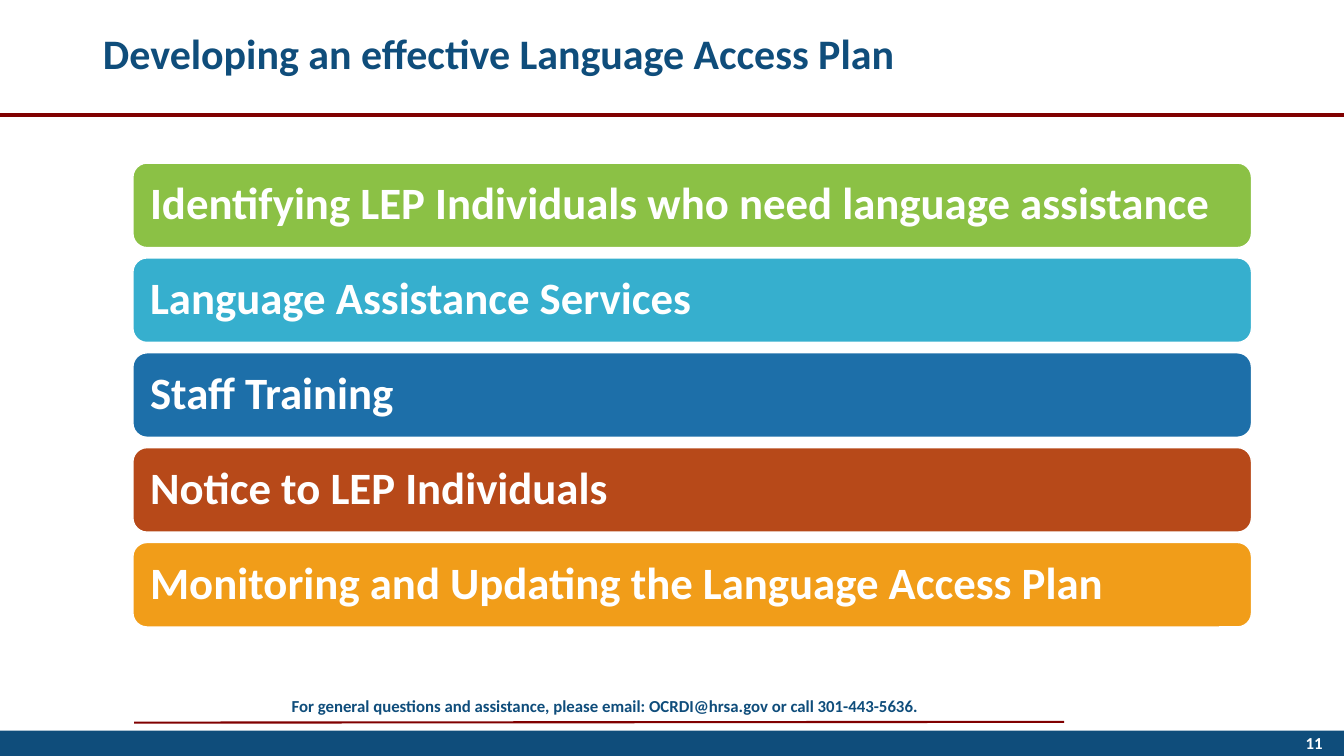
from pptx import Presentation
from pptx.dml.color import RGBColor
from pptx.enum.shapes import MSO_CONNECTOR, MSO_SHAPE
from pptx.enum.text import MSO_ANCHOR, PP_ALIGN
from pptx.oxml.ns import qn
from pptx.util import Cm, Pt
from lxml.etree import SubElement

NAVY = RGBColor(0x0F, 0x4D, 0x7B)
MAROON = RGBColor(0x80, 0x00, 0x00)
WHITE = RGBColor(0xFF, 0xFF, 0xFF)
GREEN = RGBColor(0x8B, 0xC1, 0x45)
TEAL = RGBColor(0x36, 0xAF, 0xCE)
BLUE = RGBColor(0x1D, 0x6F, 0xA9)
RUST = RGBColor(0xB7, 0x49, 0x19)
AMBER = RGBColor(0xF1, 0x9D, 0x19)

WIDTH, HEIGHT = Cm(33.87), Cm(19.05)
STEPS = [
    ("Identifying LEP Individuals who need language assistance", GREEN),
    ("Language Assistance Services", TEAL),
    ("Staff Training", BLUE),
    ("Notice to LEP Individuals", RUST),
    ("Monitoring and Updating the Language Access Plan", AMBER),
]


def write(shape, text, size, color, align=PP_ALIGN.LEFT, anchor=MSO_ANCHOR.MIDDLE):
    frame = shape.text_frame
    frame.text = text
    frame.word_wrap = True
    frame.vertical_anchor = anchor
    para = frame.paragraphs[0]
    para.alignment = align
    font = para.runs[0].font
    font.name, font.size, font.bold = "Calibri", Pt(size), True
    font.color.rgb = color
    return para


def add_rule(slide, start, end, weight):
    rule = slide.shapes.add_connector(MSO_CONNECTOR.STRAIGHT, *start, *end)
    rule.line.color.rgb = MAROON
    rule.line.width = Pt(weight)
    SubElement(rule._element.spPr, qn("a:effectLst"))


def add_block(slide, kind, box, fill):
    block = slide.shapes.add_shape(kind, *box)
    block.shadow.inherit = False
    block.fill.solid()
    block.fill.fore_color.rgb = fill
    block.line.fill.background()
    return block


def add_title(slide, left, top, width, height):
    title = slide.shapes.title
    title.left, title.top, title.width, title.height = left, top, width, height
    para = write(title, "Developing an effective Language Access Plan", 30, NAVY)
    para.line_spacing = 0.9
    base = top + Cm(3.33)
    add_rule(slide, (0, base), (WIDTH, base), 3)


def add_steps(slide, left, top, width, height):
    """Stack one rounded bar per step, evenly spaced to fill the box."""
    gap = Cm(0.26)
    tall = (height - gap * (len(STEPS) - 1)) // len(STEPS)
    for i, (text, color) in enumerate(STEPS):
        box = (left, top + i * (tall + gap), width, tall)
        bar = add_block(slide, MSO_SHAPE.ROUNDED_RECTANGLE, box, color)
        bar.line.color.rgb = WHITE
        bar.line.width = Pt(1)
        frame = bar.text_frame
        frame.margin_left = frame.margin_right = Cm(0.33)
        frame.margin_top = frame.margin_bottom = Cm(0.33)
        write(bar, text, 32, WHITE).line_spacing = 0.9


def add_footer(slide, left, top, width, height):
    """Place the contact line and its rule above a band with the page number."""
    band = Cm(0.64)
    add_rule(slide, (left + Cm(3.38), top + Cm(0.81)),
             (left + Cm(26.82), top + Cm(0.79)), 1.5)
    add_block(slide, MSO_SHAPE.RECTANGLE,
              (left, top + height - band, width, band), NAVY)
    note = slide.shapes.add_textbox(left + Cm(4.24), top, Cm(22.02), Cm(0.76))
    write(note, "For general questions and assistance, please email: "
          "OCRDI@hrsa.gov or call 301-443-5636.", 12, NAVY,
          PP_ALIGN.CENTER, MSO_ANCHOR.TOP)
    page = slide.shapes.add_textbox(left + Cm(25.96), top + Cm(0.81), Cm(7.62), Cm(1.02))
    write(page, "11", 12, WHITE, PP_ALIGN.RIGHT)


def main():
    deck = Presentation()
    deck.slide_width, deck.slide_height = WIDTH, HEIGHT
    slide = deck.slides.add_slide(deck.slide_layouts[5])
    add_title(slide, Cm(2.34), Cm(-0.43), Cm(29.21), Cm(3.68))
    add_steps(slide, Cm(3.35), Cm(4.11), Cm(28.19), Cm(11.69))
    add_footer(slide, 0, Cm(17.4), WIDTH, HEIGHT - Cm(17.4))
    deck.save("out.pptx")


if __name__ == "__main__":
    main()
